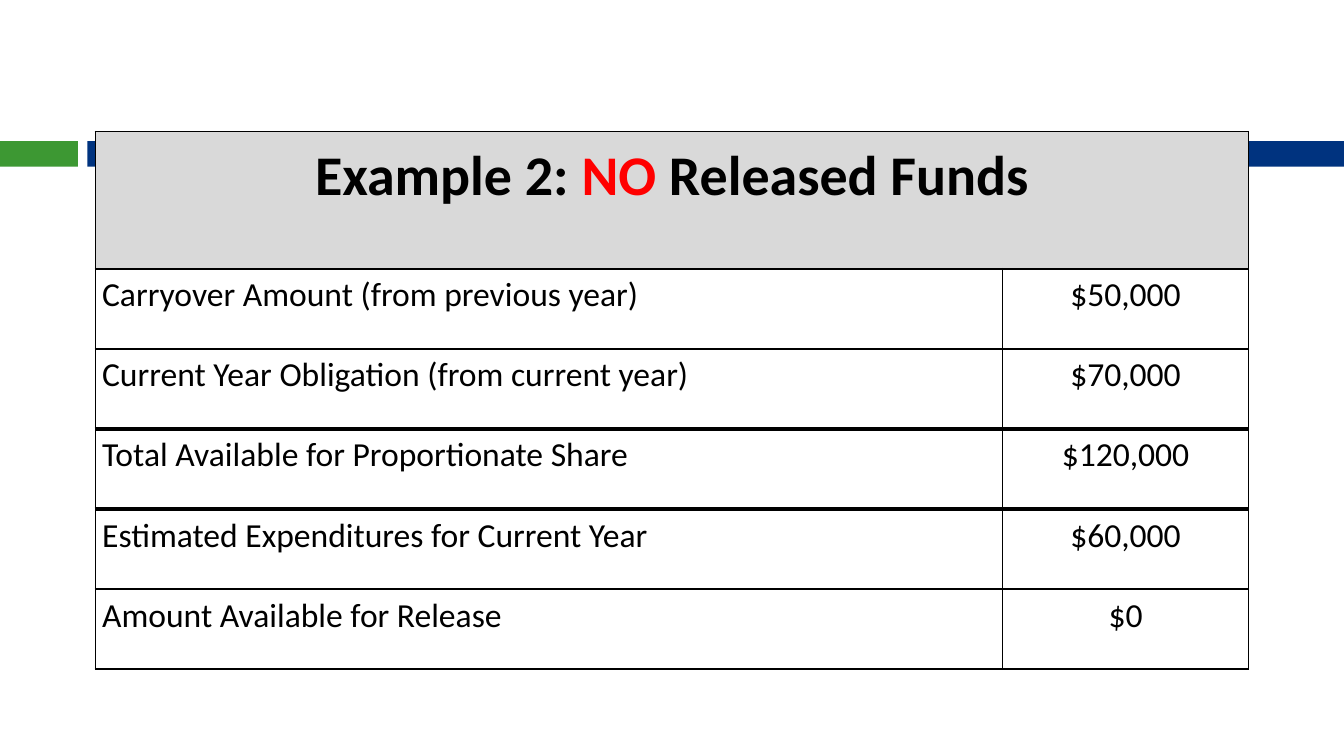
import pptx
import pptx.util
import pptx.dml.color
import pptx.enum.shapes
import pptx.enum.text
import pptx.oxml.ns
import lxml.etree

COLORS = {
    "green": "3D9833",
    "blue": "00337F",
    "header": "D9D9D9",
    "text": "000000",
    "accent": "FF0000",
}
FONT = "Calibri"


def rgb(name):
    return pptx.dml.color.RGBColor.from_string(COLORS[name])


def write_cell(cell, runs, size, bold, centered, fill, top, bottom):
    """Fill one cell with coloured runs and draw its four borders."""
    cell.margin_left = cell.margin_right = pptx.util.Inches(0.05)
    cell.margin_top = cell.margin_bottom = 0
    paragraph = cell.text_frame.paragraphs[0]
    alignments = pptx.enum.text.PP_ALIGN
    paragraph.alignment = alignments.CENTER if centered else alignments.LEFT
    paragraph.line_spacing = 1.15
    paragraph.space_after = pptx.util.Pt(10)
    for text, color in runs:
        run = paragraph.add_run()
        run.text = text
        run.font.name = FONT
        run.font.size = pptx.util.Pt(size)
        run.font.bold = bold
        run.font.color.rgb = rgb(color)

    # Borders come before the fill in the cell properties
    properties = cell._tc.get_or_add_tcPr()
    qualified = pptx.oxml.ns.qn
    for side, width in (("L", 1), ("R", 1), ("T", top), ("B", bottom)):
        line = lxml.etree.SubElement(properties, qualified(f"a:ln{side}"))
        line.set("w", str(int(pptx.util.Pt(width))))
        solid = lxml.etree.SubElement(line, qualified("a:solidFill"))
        lxml.etree.SubElement(solid, qualified("a:srgbClr")).set("val", COLORS["text"])
    if fill:
        cell.fill.solid()
        cell.fill.fore_color.rgb = rgb(fill)
    else:
        cell.fill.background()


# Widescreen slide, 16 to 9
presentation = pptx.Presentation()
presentation.slide_width = pptx.util.Inches(10)
presentation.slide_height = pptx.util.Inches(10 * 9 / 16)
slide = presentation.slides.add_slide(presentation.slide_layouts[6])

# Two-colour band across the slide
for left, width, color in ((0, 0.58, "green"), (0.65, 9.35, "blue")):
    shape = slide.shapes.add_shape(
        pptx.enum.shapes.MSO_SHAPE.RECTANGLE,
        pptx.util.Inches(left), pptx.util.Inches(1.05),
        pptx.util.Inches(width), pptx.util.Inches(0.19),
    )
    shape.shadow.inherit = False
    shape.fill.solid()
    shape.fill.fore_color.rgb = rgb(color)
    shape.line.fill.background()

# Table grid: a tall heading row, then equal rows in the height left
entries = [
    ("Carryover Amount (from previous year)", "$50,000"),
    ("Current Year Obligation (from current year)", "$70,000"),
    ("Total Available for Proportionate Share", "$120,000"),
    ("Estimated Expenditures for Current Year", "$60,000"),
    ("Amount Available for Release", "$0"),
]
table_height, heading_height = 4, 1.02
column_widths = [6.75, 1.83]
entry_height = (table_height - heading_height) / len(entries)
row_heights = [heading_height] + [entry_height] * len(entries)
table = slide.shapes.add_table(
    len(row_heights), len(column_widths),
    pptx.util.Inches(0.71), pptx.util.Inches(0.98),
    pptx.util.Inches(sum(column_widths)), pptx.util.Inches(table_height),
).table
table.horz_banding = False
for column, width in zip(table.columns, column_widths):
    column.width = pptx.util.Inches(width)
for row, height in zip(table.rows, row_heights):
    row.height = pptx.util.Inches(height)

# Heading row across both columns
heading = [("Example 2: ", "text"), ("NO", "accent"), (" Released Funds", "text")]
table.cell(0, 0).merge(table.cell(0, 1))
for column, runs in enumerate((heading, [])):
    write_cell(table.cell(0, column), runs, 30, True, True, "header", 1, 1)

# Amount rows, with heavy rules around the total
rules = [1, 1, 2.25, 2.5, 1, 1]
for row, entry in enumerate(entries, start=1):
    for column, text in enumerate(entry):
        write_cell(table.cell(row, column), [(text, "text")], 18, False,
                   column == 1, None, rules[row - 1], rules[row])

presentation.save("out.pptx")
